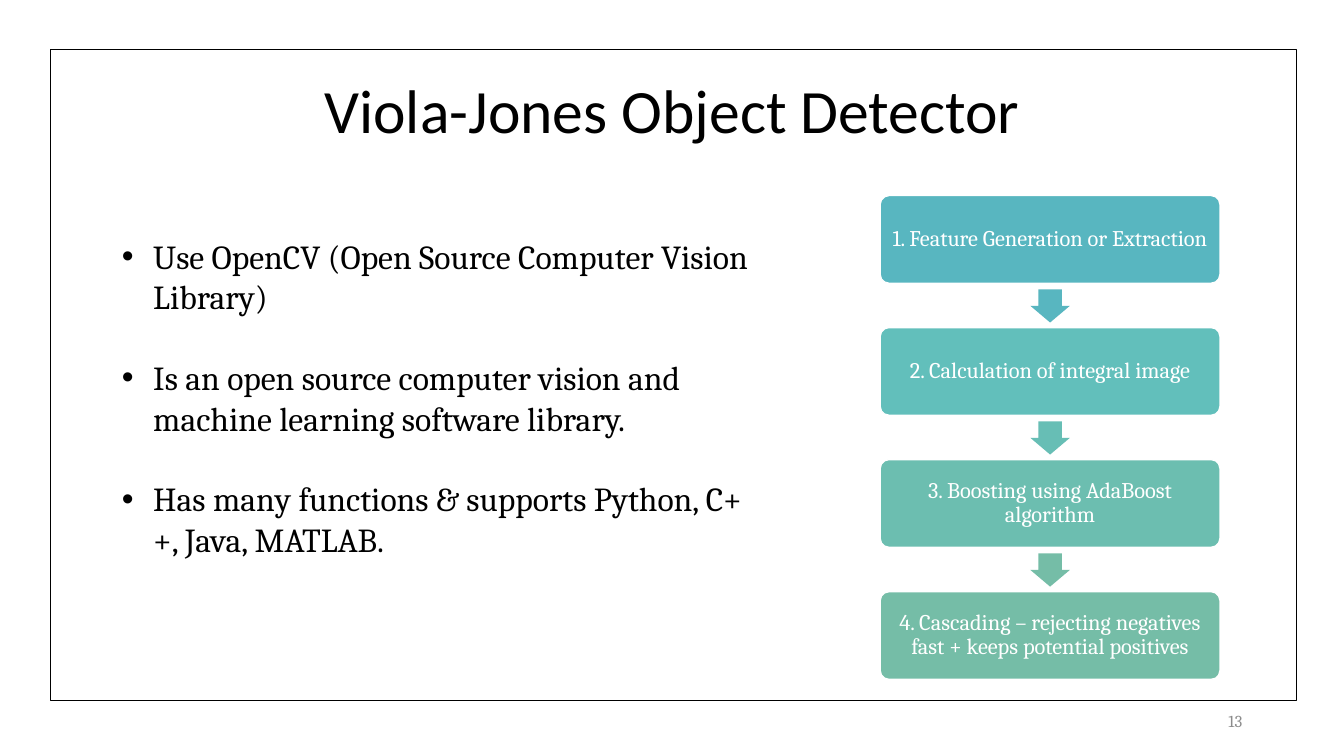
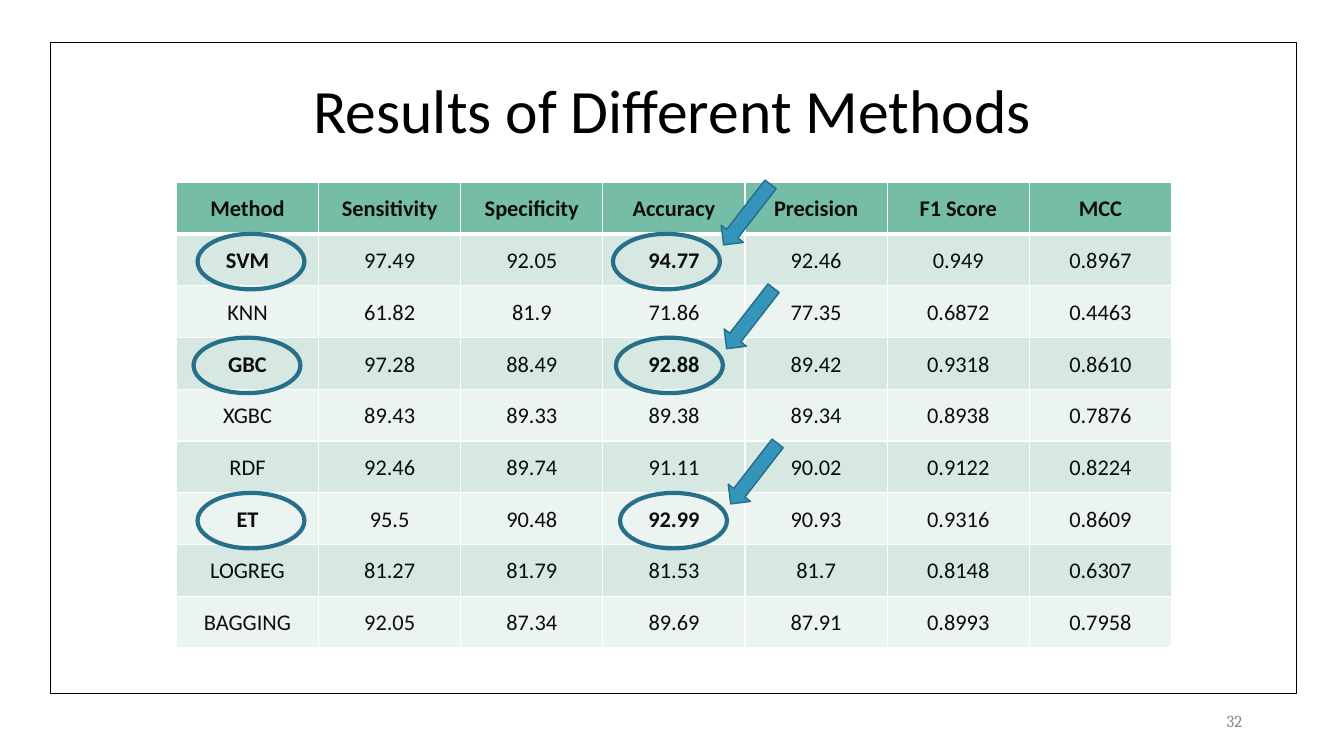
from lxml import etree
from pptx import Presentation
from pptx.dml.color import RGBColor
from pptx.enum.shapes import MSO_SHAPE
from pptx.enum.text import MSO_ANCHOR, MSO_AUTO_SIZE, PP_ALIGN
from pptx.oxml.ns import qn
from pptx.util import Emu, Pt

RECT, ROUND = MSO_SHAPE.RECTANGLE, MSO_SHAPE.ROUNDED_RECTANGLE
OVAL, DOWN = MSO_SHAPE.OVAL, MSO_SHAPE.DOWN_ARROW
LEFT, CENTER, RIGHT = PP_ALIGN.LEFT, PP_ALIGN.CENTER, PP_ALIGN.RIGHT
TOP, MIDDLE = MSO_ANCHOR.TOP, MSO_ANCHOR.MIDDLE
NO_FIT = MSO_AUTO_SIZE.NONE
TITLE_AND_BODY, TITLE_ONLY = 1, 5


def px(n):
    """One hundred px to the inch."""
    return Emu(n * 9144)


def color(hex_code):
    return RGBColor.from_string(hex_code)


class Deck:
    HEAD, TEXT = "Calibri", "Cambria"
    BLACK, WHITE, GREY, INK = "000000", "FFFFFF", "8C8C8C", "0D0D0D"
    GREEN, BANDS = "75BDA7", ("D6E8E1", "ECF4F1")
    BLUE, RING, EDGE = "3494BA", "276F8B", "266D8A"

    def __init__(self):
        self.prs = Presentation()
        self.prs.slide_width, self.prs.slide_height = px(1333), px(750)
        self.s = None

    def slide(self, layout, title, number, frame_top):
        """Start a slide with its title, page number and frame."""
        self.s = self.prs.slides.add_slide(self.prs.slide_layouts[layout])
        sp = self.s.shapes.title
        self.place(sp, 92, 40, 1150, 145)
        self.set_text(sp.text_frame, [title], 44, self.HEAD, self.BLACK, spacing=0.9)
        box = self.s.shapes.add_textbox(px(942), px(695), px(300), px(40))
        self.set_text(box.text_frame, [number], 12, self.TEXT, self.GREY, RIGHT)
        self.shape(RECT, 50, frame_top, 1236, 646, line=self.BLACK, weight=0.75)

    def place(self, sp, x, y, w, h):
        sp.left, sp.top, sp.width, sp.height = px(x), px(y), px(w), px(h)

    def set_text(self, tf, lines, size, font, ink, align=CENTER, anchor=MIDDLE,
                 spacing=1.0, after=0):
        tf.word_wrap, tf.auto_size, tf.vertical_anchor = True, NO_FIT, anchor
        for i, line in enumerate(lines):
            p = tf.add_paragraph() if i else tf.paragraphs[0]
            p.space_before, p.space_after = Pt(0), Pt(after)
            self.run(p, line, size, font, ink, align, spacing)

    def run(self, p, text, size, font, ink, align, spacing, bold=False):
        p.alignment, p.line_spacing = align, spacing
        r = p.add_run()
        r.text = text
        r.font.size, r.font.name, r.font.bold = Pt(size), font, bold
        r.font.color.rgb = color(ink)

    def shape(self, kind, x, y, w, h, fill=None, line=None, weight=1,
              turn=0, adjust=()):
        sp = self.s.shapes.add_shape(kind, px(x), px(y), px(w), px(h))
        sp.shadow.inherit = False
        sp.rotation = turn
        for i, value in enumerate(adjust):
            sp.adjustments[i] = value
        if fill:
            sp.fill.solid()
            sp.fill.fore_color.rgb = color(fill)
        else:
            sp.fill.background()
        if line:
            sp.line.color.rgb = color(line)
            sp.line.width = Pt(weight)
        else:
            sp.line.fill.background()
        return sp

    def bullets(self, items, x, y, w, h):
        sp = self.s.placeholders[1]
        self.place(sp, x, y, w, h)
        tf = sp.text_frame
        self.set_text(tf, items, 24, self.TEXT, self.BLACK, LEFT, TOP, after=29)
        for p in tf.paragraphs:
            pPr = p._p.get_or_add_pPr()
            pPr.set("marL", str(px(31)))
            pPr.set("indent", str(-px(31)))
            etree.SubElement(pPr, qn("a:buFont")).set("typeface", "Arial")
            etree.SubElement(pPr, qn("a:buChar")).set("char", "•")

    def flow(self, steps, x, y, w, h, pitch):
        """Boxes from top to bottom, with an arrow centred in each gap."""
        arrow_w, arrow_h = 39, 33
        for i, (text, fill, arrow_fill) in enumerate(steps):
            top = y + i * pitch
            sp = self.shape(ROUND, x, top, w, h, fill, self.WHITE, adjust=[0.1])
            tf = sp.text_frame
            tf.margin_left = tf.margin_right = px(9)
            self.set_text(tf, [text], 16, self.TEXT, self.WHITE, spacing=0.9)
            if arrow_fill:
                self.shape(DOWN, x + (w - arrow_w) // 2,
                           top + h + (pitch - h - arrow_h + 1) // 2,
                           arrow_w, arrow_h, arrow_fill, adjust=[0.6, 0.5])

    def border(self, cell, side, weight):
        tcPr = cell._tc.get_or_add_tcPr()
        ln = etree.SubElement(tcPr, qn(f"a:ln{side}"), w=str(Pt(weight)))
        fill = etree.SubElement(ln, qn("a:solidFill"))
        etree.SubElement(fill, qn("a:srgbClr"), val=self.WHITE)

    def table(self, rows, x, y, w, h, bold_cells):
        grid = self.s.shapes.add_table(len(rows), len(rows[0]),
                                       px(x), px(y), px(w), px(h)).table
        for i, row in enumerate(rows):
            weights = {"L": 1, "R": 1, "T": 3 if i == 1 else 1, "B": 1 if i else 3}
            for j, text in enumerate(row):
                cell = grid.cell(i, j)
                cell.margin_left = cell.margin_right = px(7)
                cell.margin_top = cell.margin_bottom = 0
                cell.vertical_anchor = MIDDLE
                for side, weight in weights.items():
                    self.border(cell, side, weight)
                cell.fill.solid()
                cell.fill.fore_color.rgb = color(
                    self.BANDS[(i - 1) % 2] if i else self.GREEN)
                self.run(cell.text_frame.paragraphs[0], text, 16, self.HEAD,
                         self.INK, CENTER, 1.07, i == 0 or (i, j) in bold_cells)

    def ring(self, x, y):
        self.shape(OVAL, x, y, 106, 55, line=self.RING, weight=3)

    def pointer(self, x, y):
        self.shape(DOWN, x, y, 28, 76, self.BLUE, self.EDGE, turn=37.8)


STEPS = [
    # text, box fill, fill of the arrow below
    ("1. Feature Generation or Extraction", "58B6C0", "58B6C0"),
    ("2. Calculation of integral image", "62BFBB", "67BEB5"),
    ("3. Boosting using AdaBoost algorithm", "6CBEB0", "75BDA7"),
    ("4. Cascading – rejecting negatives fast + keeps potential positives",
     "75BDA7", None),
]

RESULTS = [
    ("Method", "Sensitivity", "Specificity", "Accuracy", "Precision", "F1 Score", "MCC"),
    ("SVM", "97.49", "92.05", "94.77", "92.46", "0.949", "0.8967"),
    ("KNN", "61.82", "81.9", "71.86", "77.35", "0.6872", "0.4463"),
    ("GBC", "97.28", "88.49", "92.88", "89.42", "0.9318", "0.8610"),
    ("XGBC", "89.43", "89.33", "89.38", "89.34", "0.8938", "0.7876"),
    ("RDF", "92.46", "89.74", "91.11", "90.02", "0.9122", "0.8224"),
    ("ET", "95.5", "90.48", "92.99", "90.93", "0.9316", "0.8609"),
    ("LOGREG", "81.27", "81.79", "81.53", "81.7", "0.8148", "0.6307"),
    ("BAGGING", "92.05", "87.34", "89.69", "87.91", "0.8993", "0.7958"),
]

# Best rows: left edges of the rings on method and accuracy
BEST = {1: (196, 608), 3: (192, 611), 6: (196, 615)}


def main():
    deck = Deck()

    # Detector: notes on the left, steps on the right
    deck.slide(TITLE_AND_BODY, "Viola-Jones Object Detector", "13", 49)
    deck.bullets(["Use OpenCV (Open Source Computer Vision Library)",
                  "Is an open source computer vision and machine learning "
                  "software library.",
                  "Has many functions & supports Python, C++, Java, MATLAB."],
                 111, 229, 644, 374)
    deck.flow(STEPS, 873, 194, 337, 87, 131)

    # Results: table with the best methods marked
    deck.slide(TITLE_ONLY, "Results of Different Methods", "32", 42)
    top, height = 181, 462
    deck.table(RESULTS, 175, top, 987, height,
               {(row, col) for row in BEST for col in (0, 3)})
    for row, (method_x, accuracy_x) in BEST.items():
        y = top + round(row * height / len(RESULTS))
        deck.ring(method_x, y)
        deck.ring(accuracy_x, y)
        deck.pointer(accuracy_x + 119, y - 57)

    deck.prs.save("out.pptx")


if __name__ == "__main__":
    main()
